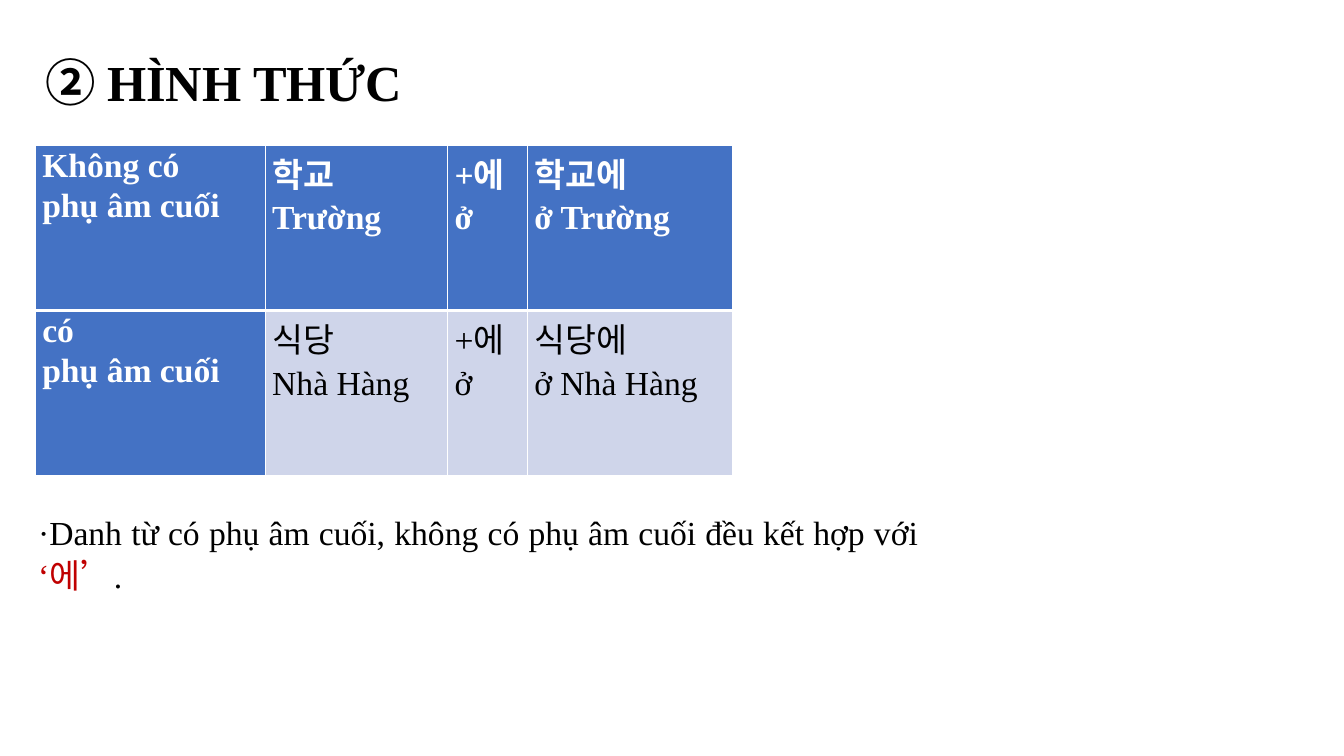
import pptx
import pptx.util
import pptx.dml.color
import pptx.enum.text
import pptx.oxml
import pptx.oxml.ns

BLACK = pptx.dml.color.RGBColor(0x00, 0x00, 0x00)
WHITE = pptx.dml.color.RGBColor(0xFF, 0xFF, 0xFF)
RED = pptx.dml.color.RGBColor(0xC0, 0x00, 0x00)
BLUE = pptx.dml.color.RGBColor(0x44, 0x72, 0xC4)
PALE = pptx.dml.color.RGBColor(0xCF, 0xD5, 0xEA)
LATIN = "Times New Roman"
KOREAN = "Noto Sans CJK KR"

HEADING = [("② ", BLACK, KOREAN), ("HÌNH THỨC", BLACK, LATIN)]
FORMS = [
    [("Không có", "phụ âm cuối"), ("학교", "Trường"), ("+에", "ở"), ("학교에", "ở Trường")],
    [("có", "phụ âm cuối"), ("식당", "Nhà Hàng"), ("+에", "ở"), ("식당에", "ở Nhà Hàng")],
]
RULE = [
    ("·Danh từ có phụ âm cuối, không có phụ âm cuối đều kết hợp với", BLACK, LATIN),
    (" ‘에’", RED, LATIN),
    (".", BLACK, LATIN),
]
COLUMNS = [2.28, 1.81, 0.79, 2.04]
ROW = 1.64
LEFT, TOP = 0.35, 1.44
LINE_SPACING = 1.07
inch = pptx.util.Inches


def write(paragraph, pieces, size, bold):
    paragraph.line_spacing = LINE_SPACING
    for words, color, typeface in pieces:
        run = paragraph.add_run()
        run.text = words
        look = {"size": pptx.util.Pt(size), "bold": bold, "name": typeface}
        for key, value in look.items():
            setattr(run.font, key, value)
        run.font.color.rgb = color
        east_asian = pptx.oxml.parse_xml(
            f'<a:ea {pptx.oxml.ns.nsdecls("a")} typeface="{KOREAN}"/>')
        run.font._element.append(east_asian)


def add_line_of_text(slide, place, pieces, size, bold, wrap):
    frame = slide.shapes.add_textbox(*map(inch, place)).text_frame
    frame.word_wrap = wrap
    frame.auto_size = pptx.enum.text.MSO_AUTO_SIZE.SHAPE_TO_FIT_TEXT
    paragraph = frame.paragraphs[0]
    paragraph.alignment = pptx.enum.text.PP_ALIGN.JUSTIFY
    paragraph.space_after = pptx.util.Pt(8)
    write(paragraph, pieces, size, bold)


def add_borders(cell, row):
    header_edge = "B" if row == 0 else "T"
    for side in "LRTB":
        width = pptx.util.Pt(3 if side == header_edge else 1)
        cell._tc.get_or_add_tcPr().append(pptx.oxml.parse_xml(
            f'<a:ln{side} {pptx.oxml.ns.nsdecls("a")} w="{width}"><a:solidFill>'
            f'<a:srgbClr val="{WHITE}"/></a:solidFill></a:ln{side}>'))


def add_forms(slide):
    forms = slide.shapes.add_table(
        len(FORMS), len(COLUMNS), inch(LEFT), inch(TOP),
        inch(sum(COLUMNS)), inch(ROW * len(FORMS))).table
    forms.first_col = True
    for column, width in zip(forms.columns, COLUMNS):
        column.width = inch(width)
    margins = {"margin_left": inch(0.07), "margin_right": inch(0.07),
               "margin_top": 0, "margin_bottom": 0}
    for r, entries in enumerate(FORMS):
        forms.rows[r].height = inch(ROW)
        for c, lines in enumerate(entries):
            cell = forms.cell(r, c)
            strong = r == 0 or c == 0
            for key, value in margins.items():
                setattr(cell, key, value)
            add_borders(cell, r)
            cell.fill.solid()
            cell.fill.fore_color.rgb = BLUE if strong else PALE
            for i, line in enumerate(lines):
                frame = cell.text_frame
                paragraph = frame.add_paragraph() if i else frame.paragraphs[0]
                write(paragraph, [(line, WHITE if strong else BLACK, LATIN)], 24, strong)


def main():
    deck = pptx.Presentation()
    deck.slide_width, deck.slide_height = inch(13.33), inch(7.5)
    slide = deck.slides.add_slide(deck.slide_layouts[6])
    add_line_of_text(slide, (LEFT, 0.42, 3.83, 0.75), HEADING, 36, True, False)
    add_forms(slide)
    add_line_of_text(slide, (0.28, 5, 8.93, 0.97), RULE, 24, False, True)
    deck.save("out.pptx")


if __name__ == "__main__":
    main()
